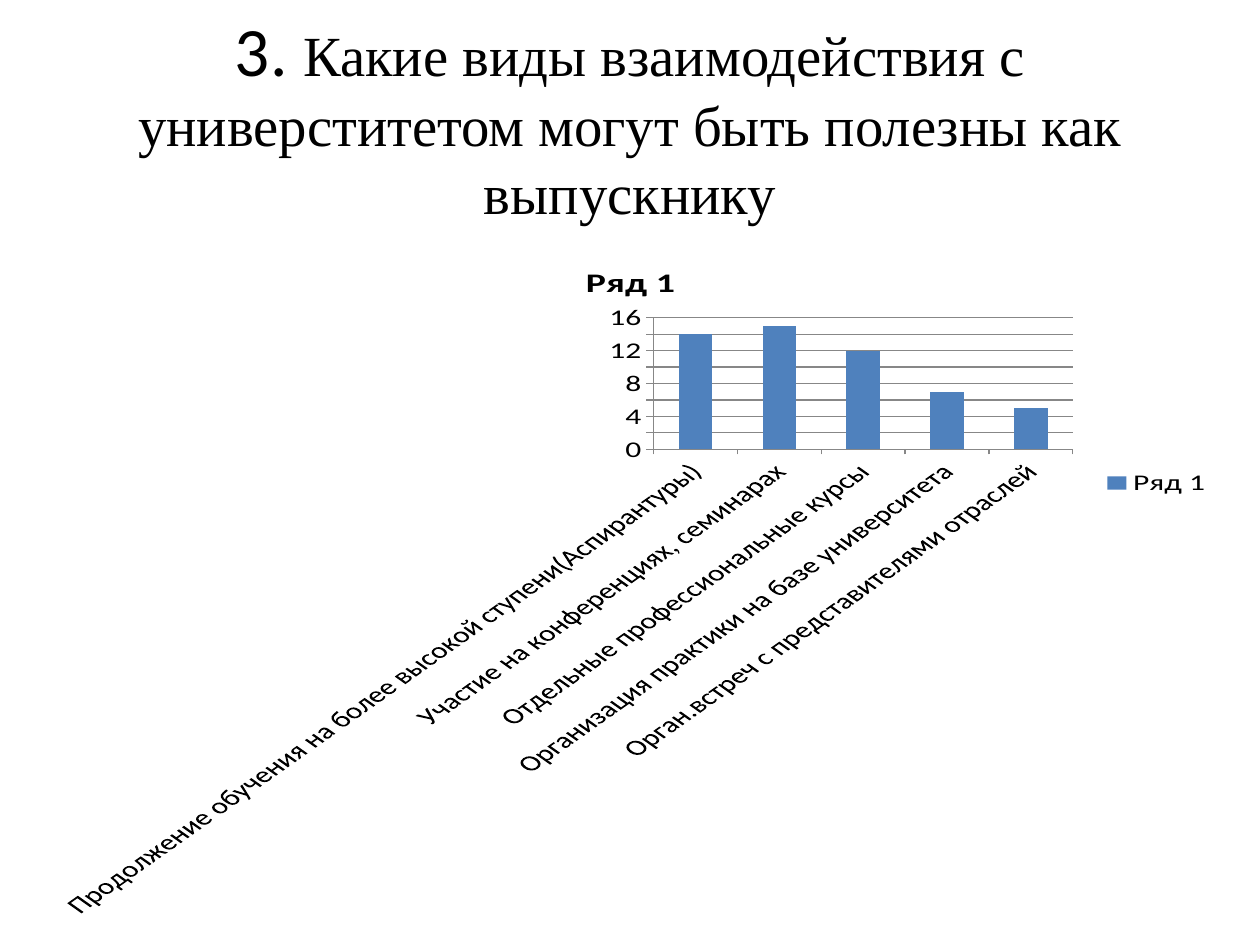
from pptx import Presentation
from pptx.chart.data import CategoryChartData
from pptx.dml.color import RGBColor
from pptx.enum import chart as ch, text
from pptx.util import Inches, Pt

COLORS = {"text": "000000", "bar": "4F81BD", "line": "878787"}
TITLE = [
    ("3. ", "Calibri", 39.6),
    ("Какие виды взаимодействия с универститетом могут быть полезны как выпускнику",
     "Times New Roman", 32.4),
]
SERIES = "Ряд 1"
ANSWERS = {
    "Продолжение обучения на более высокой ступени(Аспирантуры)": 14,
    "Участие на конференциях, семинарах": 15,
    "Отдельные профессиональные курсы": 12,
    "Организация практики на базе университета": 7,
    "Орган.встреч с представителями отраслей": 5,
}


def color(name):
    return RGBColor.from_string(COLORS[name])


def style(font, name="Calibri", size=18, bold=False):
    font.name, font.size, font.bold = name, Pt(size), bold
    font.color.rgb = color("text")


def add_span(para, words, **look):
    span = para.add_run()
    span.text = words
    style(span.font, **look)


def add_title(page):
    box = page.shapes.title
    box.left, box.top, box.width, box.height = map(Inches, (0.5, 0.3, 9, 1.25))
    frame = box.text_frame
    frame.word_wrap = True
    frame.auto_size = text.MSO_AUTO_SIZE.NONE
    frame.vertical_anchor = text.MSO_ANCHOR.MIDDLE
    para = frame.paragraphs[0]
    para.alignment = text.PP_ALIGN.CENTER
    for words, name, size in TITLE:
        add_span(para, words, name=name, size=size)


def add_answers(page):
    data = CategoryChartData()
    data.categories = list(ANSWERS)
    data.add_series(SERIES, list(ANSWERS.values()))
    chart = page.shapes.add_chart(
        ch.XL_CHART_TYPE.COLUMN_CLUSTERED,
        *map(Inches, (0.28, 1.94, 9.45, 5.35)), data).chart
    style(chart.font)
    chart.has_title = True
    add_span(chart.chart_title.text_frame.paragraphs[0], SERIES, size=21.6, bold=True)
    chart.chart_title.include_in_layout = False
    chart.has_legend = True
    chart.legend.position = ch.XL_LEGEND_POSITION.RIGHT
    chart.legend.include_in_layout = False

    plot = chart.plots[0]
    plot.gap_width = 150
    plot.vary_by_categories = False
    fill = plot.series[0].format.fill
    fill.solid()
    fill.fore_color.rgb = color("bar")

    values, categories = chart.value_axis, chart.category_axis
    values.minimum_scale, values.maximum_scale, values.major_unit = 0, 16, 2
    values.has_major_gridlines = True
    for part in (values, categories, values.major_gridlines):
        part.format.line.color.rgb = color("line")
        part.format.line.width = Pt(0.75)
    for axis in (values, categories):
        axis.major_tick_mark = ch.XL_TICK_MARK.OUTSIDE
        style(axis.tick_labels.font)
    categories._element.txPr.bodyPr.set("rot", "-2700000")


deck = Presentation()
deck.slide_width, deck.slide_height = Inches(10), Inches(7.5)
page = deck.slides.add_slide(deck.slide_layouts[5])
add_title(page)
add_answers(page)
deck.save("out.pptx")
